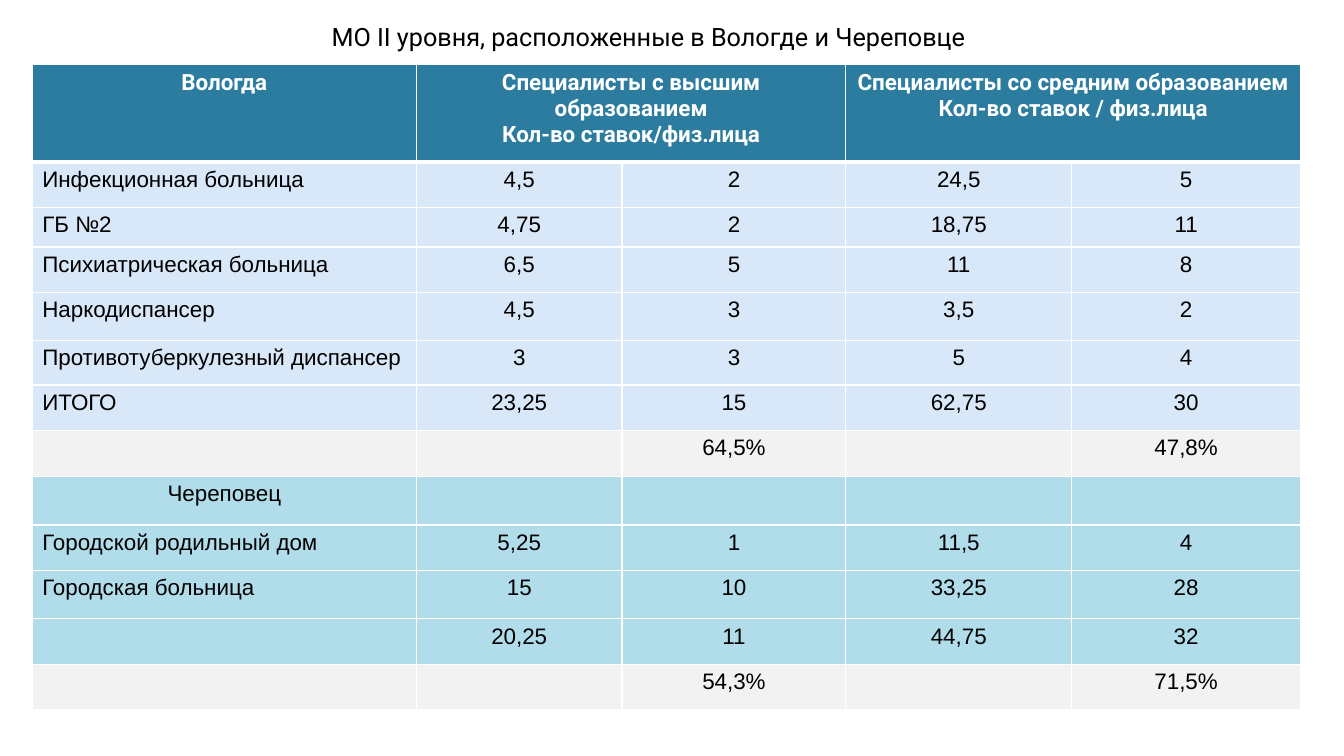
from dataclasses import dataclass

from lxml import etree
from pptx import Presentation, util as u
from pptx.dml.color import RGBColor
from pptx.enum import text
from pptx.oxml import ns

PX = 9144  # EMU, 100 px to the inch

WHITE = RGBColor(0xFF, 0xFF, 0xFF)
BLACK = RGBColor(0x00, 0x00, 0x00)
HEADER_TEAL = RGBColor(0x2C, 0x7C, 0x9F)
VOLOGDA_BLUE = RGBColor(0xD9, 0xE8, 0xF9)
CHEREPOVETS_CYAN = RGBColor(0xB1, 0xDD, 0xEB)
SHARE_GREY = RGBColor(0xF2, 0xF2, 0xF2)

HEADER_FONT = {"name": "Roboto", "size": u.Pt(16), "bold": True}
BODY_FONT = {"name": "Arial", "size": u.Pt(16), "bold": False}
TITLE_FONT = {"name": "Roboto", "size": u.Pt(18)}

LEFT, CENTER = text.PP_ALIGN.LEFT, text.PP_ALIGN.CENTER
THIN, THICK = u.Pt(0.96), u.Pt(3)
COLUMN_WIDTHS = (381, 204, 222, 224, 227)


@dataclass(frozen=True)
class StaffRow:
    height: int
    fill: RGBColor
    texts: tuple[str, ...]
    label_align: text.PP_ALIGN = LEFT


HEADER = StaffRow(97, HEADER_TEAL, (
    "Вологда",
    "Специалисты с высшим образованием\nКол-во ставок/физ.лица", "",
    "Специалисты со средним образованием\nКол-во ставок / физ.лица", "",
), CENTER)

STAFF_ROWS = (
    HEADER,
    StaffRow(45, VOLOGDA_BLUE, ("Инфекционная больница", "4,5", "2", "24,5", "5")),
    StaffRow(39, VOLOGDA_BLUE, ("ГБ №2", "4,75", "2", "18,75", "11")),
    StaffRow(45, VOLOGDA_BLUE, ("Психиатрическая больница", "6,5", "5", "11", "8")),
    StaffRow(48, VOLOGDA_BLUE, ("Наркодиспансер", "4,5", "3", "3,5", "2")),
    StaffRow(44, VOLOGDA_BLUE, ("Противотуберкулезный диспансер", "3", "3", "5", "4")),
    StaffRow(45, VOLOGDA_BLUE, ("ИТОГО", "23,25", "15", "62,75", "30")),
    StaffRow(46, SHARE_GREY, ("", "", "64,5%", "", "47,8%")),
    StaffRow(48, CHEREPOVETS_CYAN, ("Череповец", "", "", "", ""), CENTER),
    StaffRow(45, CHEREPOVETS_CYAN, ("Городской родильный дом", "5,25", "1", "11,5", "4")),
    StaffRow(48, CHEREPOVETS_CYAN, ("Городская больница", "15", "10", "33,25", "28")),
    StaffRow(45, CHEREPOVETS_CYAN, ("", "20,25", "11", "44,75", "32")),
    StaffRow(45, SHARE_GREY, ("", "", "54,3%", "", "71,5%")),
)


def apply_font(font, formats: dict, color: RGBColor) -> None:
    for attribute, value in formats.items():
        setattr(font, attribute, value)
    font.color.rgb = color


def add_borders(cell, top: int, bottom: int) -> None:
    """Draw white cell edges; call before filling, as the schema puts lines first."""
    properties = cell._tc.get_or_add_tcPr()
    for side, width in {"L": THIN, "R": THIN, "T": top, "B": bottom}.items():
        line = etree.SubElement(properties, ns.qn(f"a:ln{side}"), w=str(int(width)))
        solid = etree.SubElement(line, ns.qn("a:solidFill"))
        etree.SubElement(solid, ns.qn("a:srgbClr"), val=str(WHITE))


def write_cell(cell, wording: str, align: text.PP_ALIGN, formats: dict,
               color: RGBColor) -> None:
    cell.text = wording
    for paragraph in cell.text_frame.paragraphs:
        paragraph.alignment = align
        apply_font(paragraph.font, formats, color)
        for run in paragraph.runs:
            apply_font(run.font, formats, color)


def add_staff_table(slide) -> None:
    table = slide.shapes.add_table(
        len(STAFF_ROWS), len(COLUMN_WIDTHS), 32 * PX, 64 * PX,
        sum(COLUMN_WIDTHS) * PX, sum(row.height for row in STAFF_ROWS) * PX,
    ).table
    table.first_row = table.horz_banding = False
    for column, width in zip(table.columns, COLUMN_WIDTHS):
        column.width = width * PX
    for first in (1, 3):
        table.cell(0, first).merge(table.cell(0, first + 1))

    for r, row in enumerate(STAFF_ROWS):
        table.rows[r].height = row.height * PX
        is_header = row is HEADER
        formats, color = (HEADER_FONT, WHITE) if is_header else (BODY_FONT, BLACK)
        for c, wording in enumerate(row.texts):
            cell = table.cell(r, c)
            add_borders(cell, THICK if r == 1 else THIN, THICK if is_header else THIN)
            cell.fill.solid()
            cell.fill.fore_color.rgb = row.fill
            write_cell(cell, wording, CENTER if c else row.label_align, formats, color)


def add_title(slide) -> None:
    frame = slide.shapes.add_textbox(319 * PX, 16 * PX, 651 * PX, 40 * PX).text_frame
    frame.word_wrap = False
    frame.auto_size = text.MSO_AUTO_SIZE.SHAPE_TO_FIT_TEXT
    title = frame.paragraphs[0].add_run()
    title.text = "МО II уровня, расположенные в Вологде и Череповце"
    apply_font(title.font, TITLE_FONT, BLACK)


def main() -> None:
    deck = Presentation()
    deck.slide_width, deck.slide_height = 1333 * PX, 750 * PX
    slide = deck.slides.add_slide(deck.slide_layouts[6])
    add_staff_table(slide)
    add_title(slide)
    deck.save("out.pptx")


if __name__ == "__main__":
    main()
